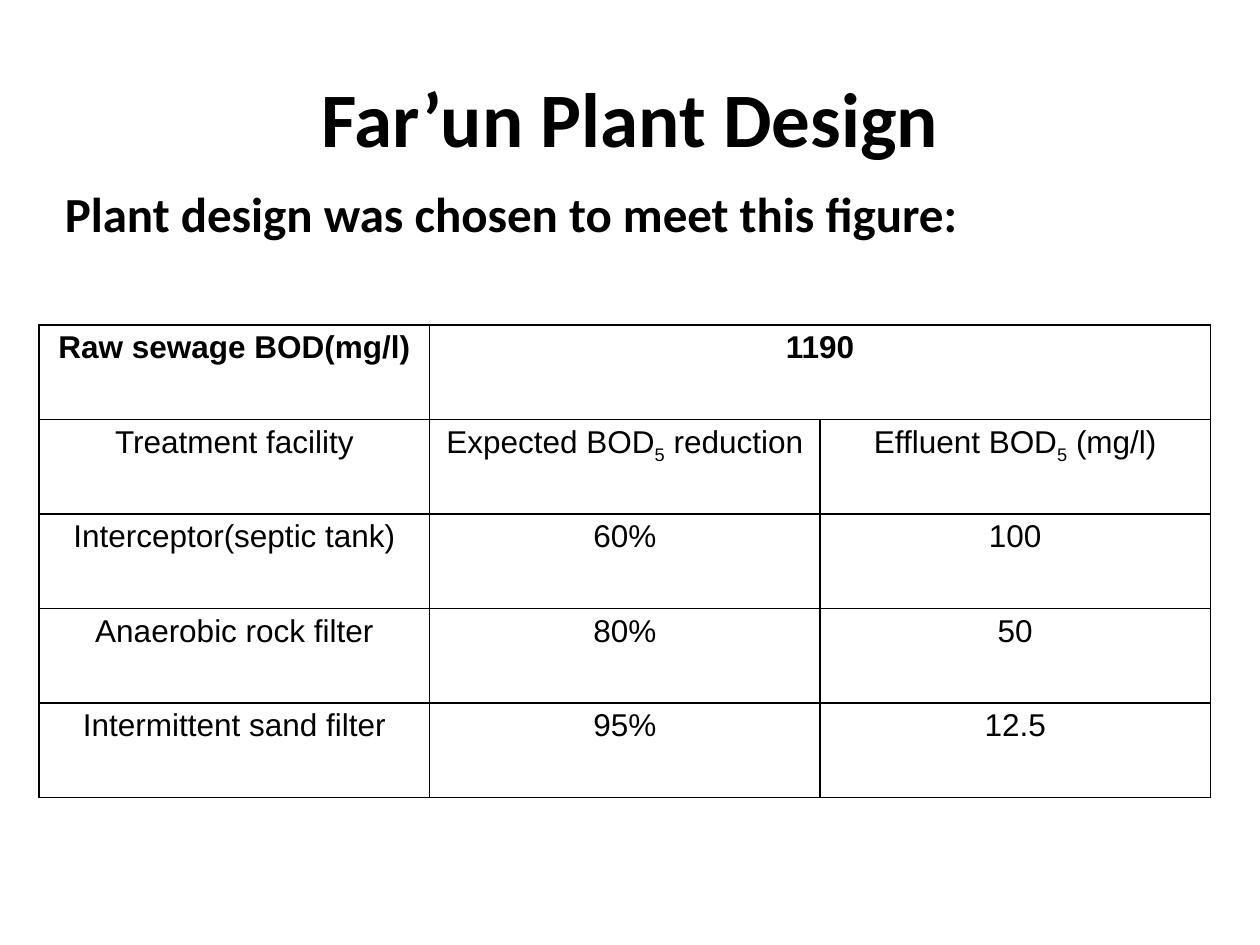
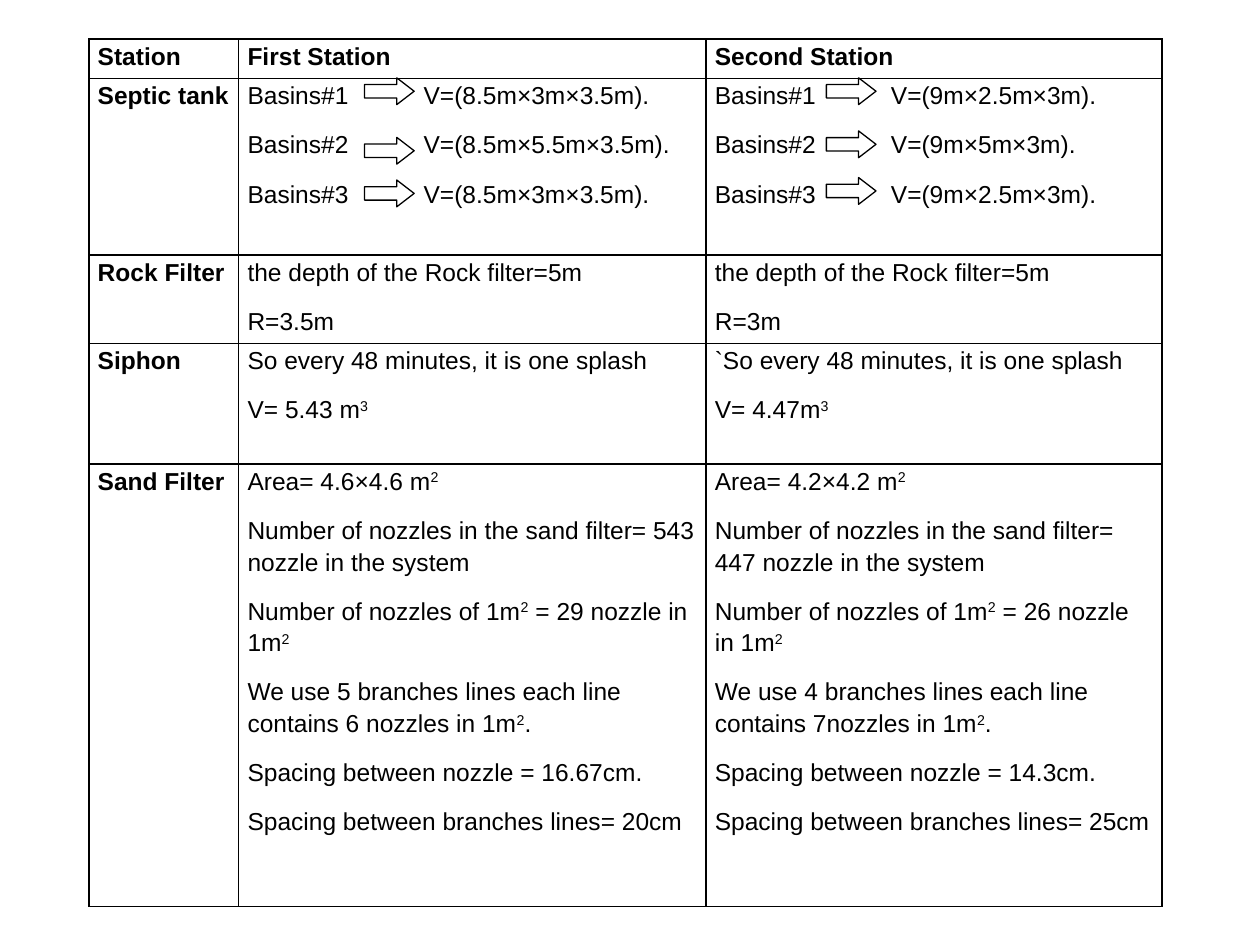
from dataclasses import dataclass
from itertools import accumulate

from lxml.etree import SubElement
from pptx import Presentation
from pptx.dml.color import RGBColor
from pptx.enum.shapes import MSO_SHAPE as Shape
from pptx.enum.text import MSO_ANCHOR as Anchor, PP_ALIGN as Align
from pptx.oxml.ns import qn
from pptx.util import Cm, Pt

COLORS = {"ink": "000000", "paper": "FFFFFF"}
HEADING_FONT, TABLE_FONT = "Calibri", "Arial"
CELL_INSET = Cm(0.18)
BORDER_WIDTH = Pt(1)
VOLUME_TAB = Cm(3.55)
ARROW_SIZE = (Cm(1), Cm(0.54))


@dataclass
class Heading:
    text: str
    left: float
    top: float
    width: float
    height: float
    size: int
    wrap: bool = True


@dataclass
class Grid:
    """Cell text: newline starts a paragraph, |x| shifts x off the baseline."""
    left: float
    top: float
    columns: list[float]
    rows: list[float]
    cells: list[list[str]]
    size: int
    align: Align
    shift: int
    space_after: int = 0
    bold_first_column: bool = False


@dataclass
class ArrowColumn:
    left: float
    tops: list[float]


HEADINGS = [
    Heading("Far’un Plant Design", 1.27, 0.76, 22.86, 3.18, 44),
    Heading("Plant design was chosen to meet this figure:",
            0.94, 3.58, 18.72, 1.45, 28, wrap=False),
]

BOD_TARGETS = Grid(
    0.79, 6.55, [7.87] * 3, [1.905] * 5,
    [
        ["Raw sewage BOD(mg/l)", "1190", ""],
        ["Treatment facility", "Expected BOD|5| reduction", "Effluent BOD|5| (mg/l)"],
        ["Interceptor(septic tank)", "60%", "100"],
        ["Anaerobic rock filter", "80%", "50"],
        ["Intermittent sand filter", "95%", "12.5"],
    ],
    size=18, align=Align.CENTER, shift=-25000)


def basins(*volumes: str) -> str:
    return "\n".join(f"Basins#{number}\tV=({volume})."
                     for number, volume in enumerate(volumes, 1))


def rock_filter(radius: str) -> str:
    return f"the depth of the Rock filter=5m\nR={radius}"


def sand_filter(side: str, total: int, density: int, branches: int,
                per_line: str, nozzle_gap: str, branch_gap: str) -> str:
    return "\n".join([
        f"Area= {side}×{side} m|2|",
        f"Number of nozzles in the sand filter= {total} nozzle in the system",
        f"Number of nozzles of 1m|2| = {density} nozzle in 1m|2|",
        f"We use {branches} branches lines each line contains {per_line} in 1m|2|.",
        f"Spacing between nozzle = {nozzle_gap}.",
        f"Spacing between branches lines= {branch_gap}",
    ])


STATIONS = Grid(
    1.79, 0.79, [3.02, 9.42, 9.19], [0.79, 3.56, 1.78, 2.43, 8.92],
    [
        ["Station", "First Station", "Second Station"],
        ["Septic tank",
         basins("8.5m×3m×3.5m", "8.5m×5.5m×3.5m", "8.5m×3m×3.5m"),
         basins("9m×2.5m×3m", "9m×5m×3m", "9m×2.5m×3m")],
        ["Rock Filter", rock_filter("3.5m"), rock_filter("3m")],
        ["Siphon",
         "So every 48 minutes, it is one splash\nV= 5.43 m|3|",
         "`So every 48 minutes, it is one splash\nV= 4.47m|3|"],
        ["Sand Filter",
         sand_filter("4.6", 543, 29, 5, "6 nozzles", "16.67cm", "20cm"),
         sand_filter("4.2", 447, 26, 4, "7nozzles", "14.3cm", "25cm")],
    ],
    size=14, align=Align.LEFT, shift=30000, space_after=10, bold_first_column=True)

VOLUME_ARROWS = [
    ArrowColumn(7.35, [1.57, 2.77, 3.63]),
    ArrowColumn(16.66, [1.57, 2.64, 3.58]),
]


def rgb(name: str) -> RGBColor:
    return RGBColor.from_string(COLORS[name])


def style_font(font, face: str, size: int, bold: bool) -> None:
    font.name, font.size, font.bold = face, Pt(size), bold
    font.color.rgb = rgb("ink")


def draw_heading(slide, heading: Heading) -> None:
    box = slide.shapes.add_textbox(Cm(heading.left), Cm(heading.top),
                                   Cm(heading.width), Cm(heading.height))
    frame = box.text_frame
    frame.word_wrap = heading.wrap
    frame.vertical_anchor = Anchor.MIDDLE if heading.wrap else Anchor.TOP
    line = frame.paragraphs[0]
    line.text = heading.text
    line.alignment = Align.CENTER
    style_font(line.font, HEADING_FONT, heading.size, True)


def draw_borders(cell) -> None:
    properties = cell._tc.get_or_add_tcPr()
    for position, side in enumerate(("lnL", "lnR", "lnT", "lnB")):
        edge = SubElement(properties, qn(f"a:{side}"), w=str(BORDER_WIDTH))
        fill = SubElement(edge, qn("a:solidFill"))
        SubElement(fill, qn("a:srgbClr"), val=COLORS["ink"])
        properties.insert(position, edge)


def write_paragraph(paragraph, text: str, grid: Grid, bold: bool) -> None:
    for index, part in enumerate(text.split("|")):
        if part:
            run = paragraph.add_run()
            run.text = part
            if index % 2:
                run._r.get_or_add_rPr().set("baseline", str(grid.shift))
    paragraph.alignment = grid.align
    paragraph.line_spacing = 1.15
    paragraph.space_after = Pt(grid.space_after)
    if "\t" in text:
        tabs = SubElement(paragraph._p.get_or_add_pPr(), qn("a:tabLst"))
        SubElement(tabs, qn("a:tab"), pos=str(VOLUME_TAB), algn="l")
    style_font(paragraph.font, TABLE_FONT, grid.size, bold)


def fill_cell(cell, text: str, grid: Grid, bold: bool) -> None:
    cell.margin_left = cell.margin_right = CELL_INSET
    cell.margin_top = cell.margin_bottom = 0
    cell.vertical_anchor = Anchor.TOP
    cell.fill.background()
    draw_borders(cell)
    frame = cell.text_frame
    for index, line in enumerate(text.split("\n")):
        paragraph = frame.add_paragraph() if index else frame.paragraphs[0]
        write_paragraph(paragraph, line, grid, bold)


def draw_grid(slide, grid: Grid):
    *_, width = accumulate(grid.columns)
    *_, height = accumulate(grid.rows)
    table = slide.shapes.add_table(len(grid.rows), len(grid.columns), Cm(grid.left),
                                   Cm(grid.top), Cm(width), Cm(height)).table
    table.first_row = table.horz_banding = False
    for column, column_width in zip(table.columns, grid.columns):
        column.width = Cm(column_width)
    for row, row_height in zip(table.rows, grid.rows):
        row.height = Cm(row_height)
    for r, texts in enumerate(grid.cells):
        for c, text in enumerate(texts):
            bold = r == 0 or (c == 0 and grid.bold_first_column)
            fill_cell(table.cell(r, c), text, grid, bold)
    return table


def draw_arrows(slide, column: ArrowColumn) -> None:
    for top in column.tops:
        arrow = slide.shapes.add_shape(Shape.RIGHT_ARROW, Cm(column.left), Cm(top),
                                       *ARROW_SIZE)
        arrow.adjustments[0], arrow.adjustments[1] = 0.5, 0.65
        arrow.shadow.inherit = False
        arrow.fill.solid()
        arrow.fill.fore_color.rgb = rgb("paper")
        arrow.line.color.rgb = rgb("ink")
        arrow.line.width = Pt(0.75)


def main() -> None:
    deck = Presentation()
    deck.slide_width, deck.slide_height = Cm(25.4), Cm(19.05)
    blank = deck.slide_layouts[6]

    design = deck.slides.add_slide(blank)
    for heading in HEADINGS:
        draw_heading(design, heading)
    targets = draw_grid(design, BOD_TARGETS)
    targets.cell(0, 1).merge(targets.cell(0, 2))

    stations = deck.slides.add_slide(blank)
    draw_grid(stations, STATIONS)
    for column in VOLUME_ARROWS:
        draw_arrows(stations, column)

    deck.save("out.pptx")


if __name__ == "__main__":
    main()
